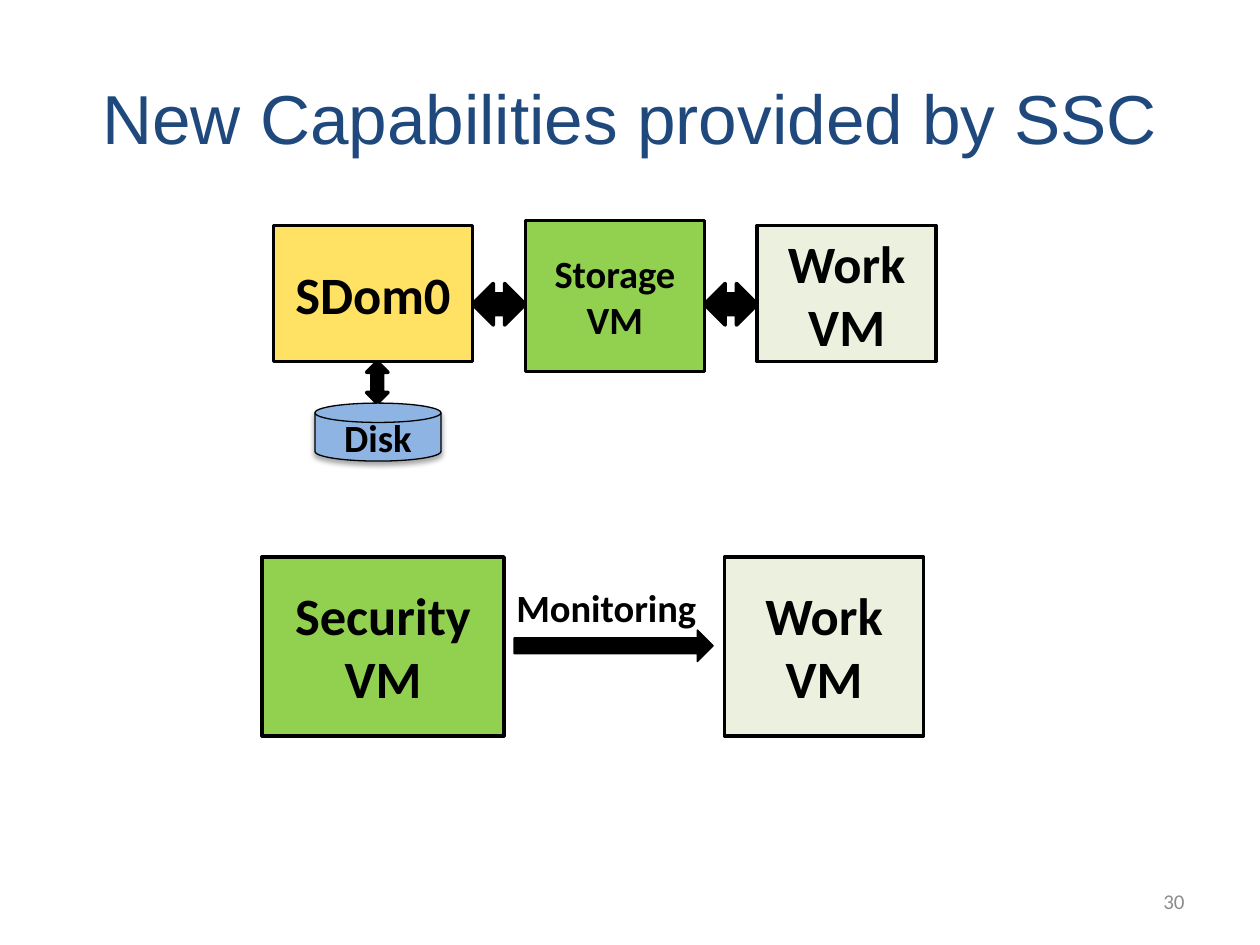
from lxml import etree
from pptx import Presentation
from pptx.dml.color import RGBColor
from pptx.enum.shapes import MSO_SHAPE
from pptx.enum.text import MSO_ANCHOR, PP_ALIGN
from pptx.oxml.ns import qn
from pptx.util import Inches, Pt

RECTANGLE = MSO_SHAPE.RECTANGLE
DOUBLE_ARROW = MSO_SHAPE.LEFT_RIGHT_ARROW
RIGHT_ARROW = MSO_SHAPE.RIGHT_ARROW
DISK = MSO_SHAPE.FLOWCHART_MAGNETIC_DISK
MIDDLE = MSO_ANCHOR.MIDDLE
LEFT, CENTER, RIGHT = PP_ALIGN.LEFT, PP_ALIGN.CENTER, PP_ALIGN.RIGHT

BLACK = RGBColor(0x00, 0x00, 0x00)
NAVY = RGBColor(0x1F, 0x49, 0x7D)
GRAY = RGBColor(0x8C, 0x8C, 0x8C)
GREEN = RGBColor(0x92, 0xD0, 0x50)
PALE_GREEN = RGBColor(0xEB, 0xF1, 0xDE)
YELLOW = RGBColor(0xFF, 0xE1, 0x64)
BLUE = RGBColor(0x8E, 0xB4, 0xE3)


def write_text(shape, text, size, color=BLACK, font="Calibri", bold=True, align=CENTER):
    """Fill a shape with uniformly formatted, vertically centred text."""
    frame = shape.text_frame
    frame.word_wrap = True
    frame.vertical_anchor = MIDDLE
    frame.text = text
    for paragraph in frame.paragraphs:
        paragraph.alignment = align
        paragraph.font.name = font
        paragraph.font.size = Pt(size)
        paragraph.font.bold = bold
        paragraph.font.color.rgb = color


def add_textbox(shapes, box, text, size, **style):
    """Add a text box and return it."""
    textbox = shapes.add_textbox(*map(Inches, box))
    write_text(textbox, text, size, **style)
    return textbox


def add_block(shapes, kind, box, fill, text="", size=30, line_width=2):
    """Add a filled, black-outlined shape with an optional label."""
    shape = shapes.add_shape(kind, *map(Inches, box))
    shape.shadow.inherit = False
    shape.fill.solid()
    shape.fill.fore_color.rgb = fill
    shape.line.color.rgb = BLACK
    shape.line.width = Pt(line_width)
    if text:
        write_text(shape, text, size)
    return shape


def add_soft_shadow(shape):
    """Give a shape a soft shadow falling straight down."""
    effects = shape._element.spPr.find(qn("a:effectLst"))
    shadow = etree.SubElement(effects, qn("a:outerShdw"), blurRad=str(Pt(3.1)),
                              dist=str(Pt(1.8)), dir="5400000", rotWithShape="0")
    color = etree.SubElement(shadow, qn("a:srgbClr"), val=str(BLACK))
    etree.SubElement(color, qn("a:alpha"), val="35000")


def add_storage_diagram(slide, left, top):
    """Draw the chain from SDom0 and its disk through the storage VM to the work VM."""
    shapes = slide.shapes.add_group_shape().shapes
    host_width, vm_width, gap = 1.58, 1.42, 0.42
    storage_left = left + host_width + gap
    work_left = storage_left + vm_width + gap
    add_block(shapes, RECTANGLE, (storage_left, top, vm_width, 1.2), GREEN, "Storage VM", 22)
    add_block(shapes, RECTANGLE, (work_left, top + 0.04, vm_width, 1.08), PALE_GREEN, "Work VM")
    add_block(shapes, RECTANGLE, (left, top + 0.04, host_width, 1.08), YELLOW, "SDom0")
    for right_edge in (storage_left, work_left):
        add_block(shapes, DOUBLE_ARROW, (right_edge - gap, top + 0.5, gap, 0.33), BLACK)
    disk_arrow = add_block(shapes, DOUBLE_ARROW, (left + 0.66, top + 1.2, 0.33, 0.17), BLACK)
    disk_arrow.rotation = 270
    disk = add_block(shapes, DISK, (left + 0.33, top + 1.45, 1, 0.46), BLUE, "Disk", 22, 0.75)
    add_soft_shadow(disk)


def add_monitoring_diagram(slide, left, top):
    """Draw the security VM monitoring the work VM."""
    shapes = slide.shapes.add_group_shape().shapes
    add_block(shapes, RECTANGLE, (left, top, 1.92, 1.42), GREEN, "Security\nVM")
    add_block(shapes, RECTANGLE, (left + 3.67, top, 1.58, 1.42), PALE_GREEN, "Work VM")
    add_block(shapes, RIGHT_ARROW, (left + 2, top + 0.58, 1.58, 0.25), BLACK, line_width=0.75)
    label = add_textbox(shapes, (left + 1.92, top + 0.16, 1.65, 0.47), "Monitoring", 22, align=LEFT)
    label.text_frame.word_wrap = False


def main():
    """Build and save the slide."""
    presentation = Presentation()
    presentation.slide_width = Inches(10)
    presentation.slide_height = Inches(7.5)
    slide = presentation.slides.add_slide(presentation.slide_layouts[6])
    add_textbox(slide.shapes, (0.5, 0.3, 9, 1.25), "New Capabilities provided by SSC", 39.6,
                color=NAVY, font="Arial", bold=False)
    add_textbox(slide.shapes, (7.17, 6.95, 2.33, 0.4), "30", 12,
                color=GRAY, bold=False, align=RIGHT)
    add_storage_diagram(slide, 2.17, 1.75)
    add_monitoring_diagram(slide, 2.08, 4.42)
    presentation.save("out.pptx")


if __name__ == "__main__":
    main()
